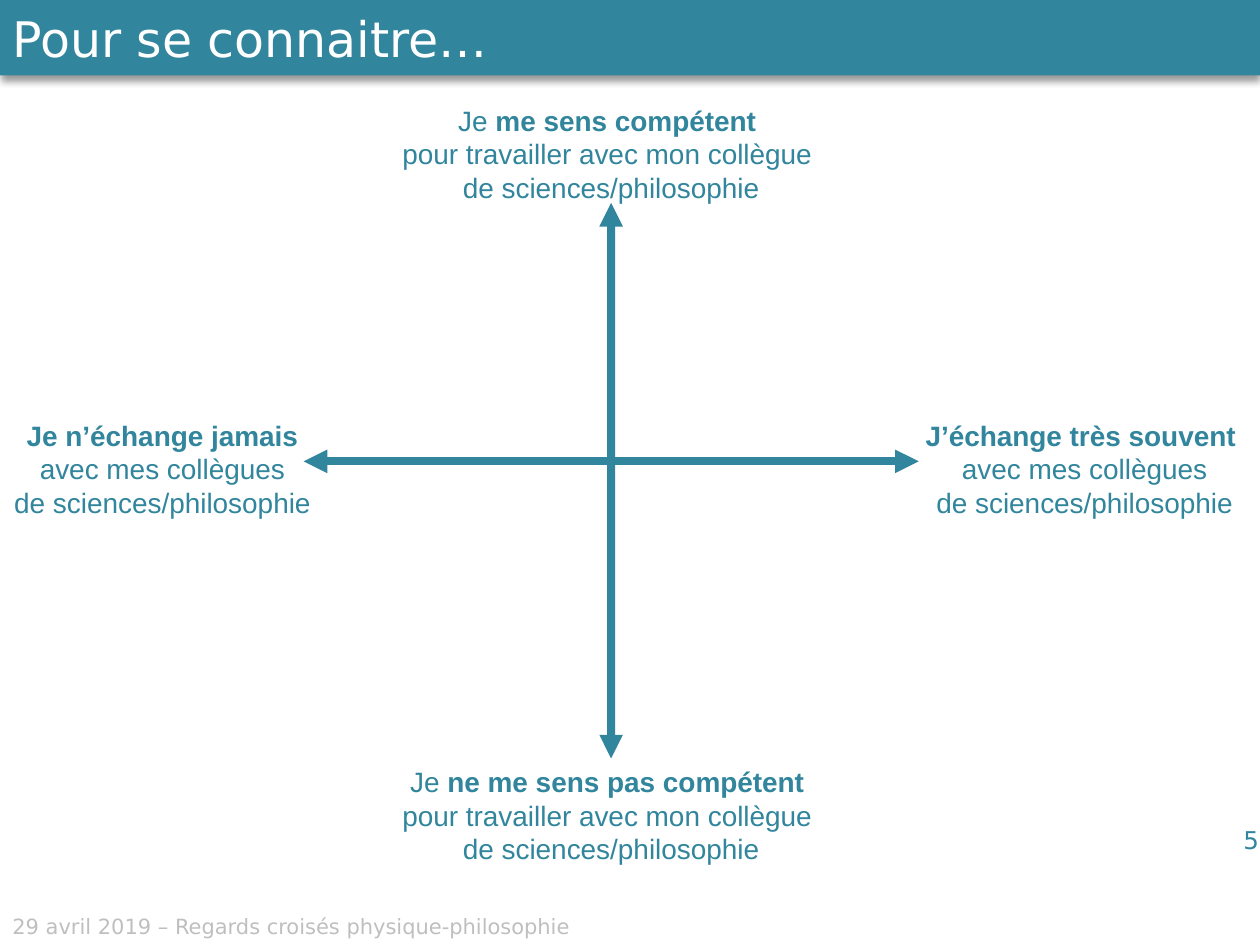
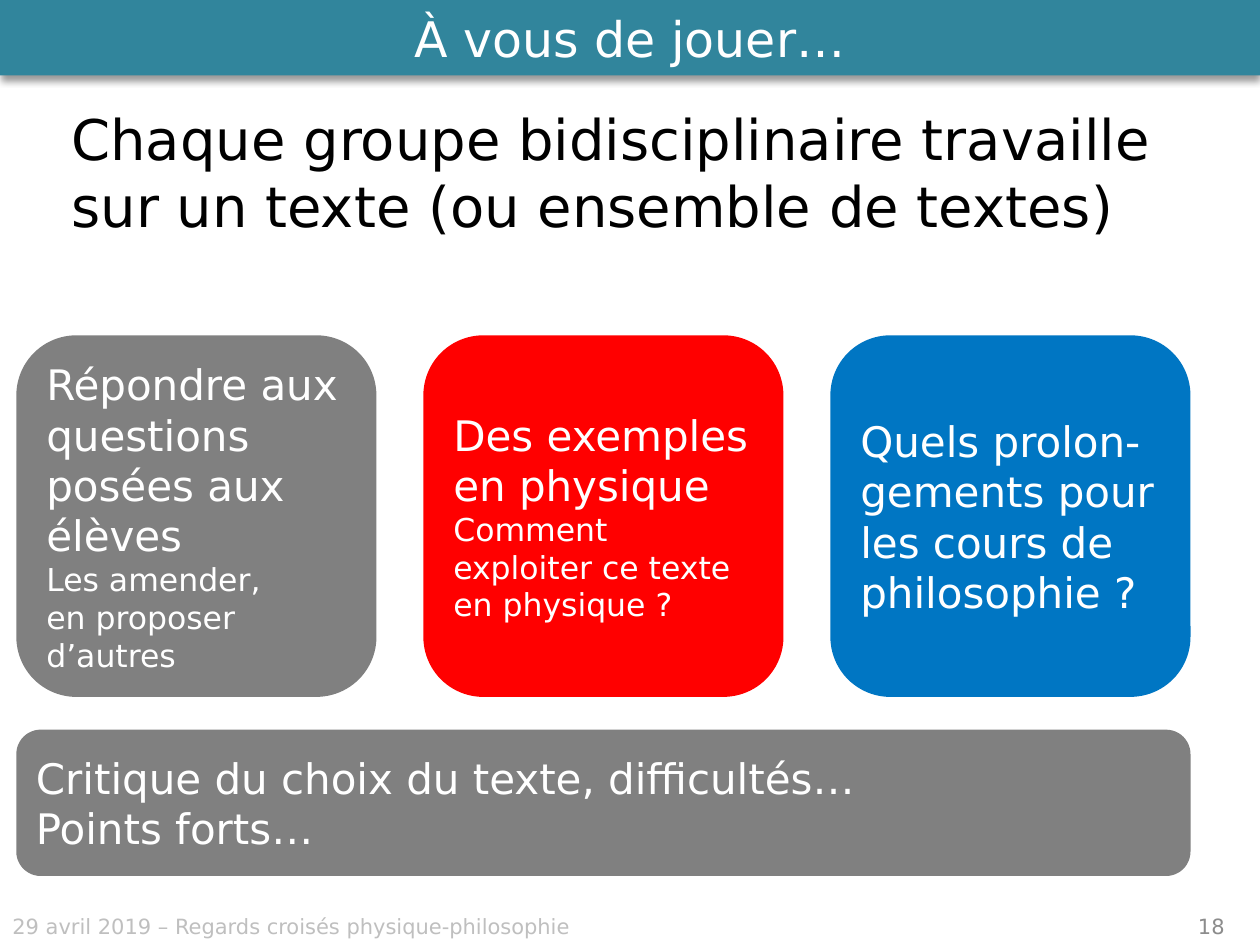
from dataclasses import dataclass

from lxml import etree
from pptx import Presentation
from pptx.dml.color import RGBColor
from pptx.enum.shapes import MSO_CONNECTOR, MSO_SHAPE
from pptx.enum.text import MSO_ANCHOR, PP_ALIGN
from pptx.oxml.ns import qn
from pptx.util import Cm, Pt

RECTANGLE = MSO_SHAPE.RECTANGLE
ROUNDED = MSO_SHAPE.ROUNDED_RECTANGLE
STRAIGHT = MSO_CONNECTOR.STRAIGHT
LEFT, CENTER, RIGHT = PP_ALIGN.LEFT, PP_ALIGN.CENTER, PP_ALIGN.RIGHT
TOP, MIDDLE = MSO_ANCHOR.TOP, MSO_ANCHOR.MIDDLE

COLORS = {
    "teal": "31859C",
    "white": "FFFFFF",
    "black": "000000",
    "grey": "808080",
    "red": "FF0000",
    "blue": "0076C3",
    "footer": "BFBFBF",
    "number": "8C8C8C",
}
BODY_FONT = "DejaVu Sans"
LABEL_FONT = "Arial"
FOOTER = "29 avril 2019 – Regards croisés physique-philosophie"


@dataclass
class Box:
    """A region of the slide, in centimetres."""
    left: float
    top: float
    width: float
    height: float

    def inner(self, left, top, width, height):
        return Box(self.left + left, self.top + top, width, height)

    def lengths(self):
        return Cm(self.left), Cm(self.top), Cm(self.width), Cm(self.height)


PAGE = Box(0, 0, 25.4, 19.05)


def color(name):
    return RGBColor.from_string(COLORS[name])


# Text and shape helpers
def write(shape, paragraphs, color_name, font=BODY_FONT, align=LEFT,
          anchor=TOP, wrap=True):
    """Each paragraph is a list of runs: (text, size, bold)."""
    frame = shape.text_frame
    frame.word_wrap = wrap
    frame.vertical_anchor = anchor
    for index, runs in enumerate(paragraphs):
        paragraph = frame.paragraphs[0] if index == 0 else frame.add_paragraph()
        paragraph.alignment = align
        for text, size, bold in runs:
            run = paragraph.add_run()
            run.text = text
            run.font.name = font
            run.font.size = Pt(size)
            run.font.bold = bold
            run.font.color.rgb = color(color_name)


def add_text(slide, box, paragraphs, color_name, **style):
    shape = slide.shapes.add_textbox(*box.lengths())
    write(shape, paragraphs, color_name, **style)
    return shape


def add_block(slide, kind, box, fill_name, paragraphs, align=LEFT):
    shape = slide.shapes.add_shape(kind, *box.lengths())
    shape.shadow.inherit = False
    shape.fill.solid()
    shape.fill.fore_color.rgb = color(fill_name)
    shape.line.fill.background()
    write(shape, paragraphs, "white", align=align, anchor=MIDDLE)
    return shape


def add_double_arrow(slide, start, end):
    points = [Cm(value) for value in (*start, *end)]
    arrow = slide.shapes.add_connector(STRAIGHT, *points)
    arrow.line.color.rgb = color("teal")
    arrow.line.width = Pt(4.5)
    line = arrow.line._get_or_add_ln()
    for tag in ("a:headEnd", "a:tailEnd"):
        etree.SubElement(line, qn(tag), type="triangle")
    etree.SubElement(arrow._element.spPr, qn("a:effectLst"))
    return arrow


# Shared parts: footer and title band
def add_footer(slide, page):
    box = page.inner(0, 18.29, 16.51, 0.76)
    add_text(slide, box, [[(FOOTER, 12, False)]], "footer")


def add_title_band(slide, page, title, align):
    band = add_block(slide, RECTANGLE, page.inner(0, 0, page.width, 1.52),
                     "teal", [[(title, 28, False)]], align)
    effects = band._element.spPr.find(qn("a:effectLst"))
    shadow = etree.SubElement(effects, qn("a:outerShdw"), blurRad=str(Pt(4)),
                              dist=str(Pt(3)), dir="5400000", rotWithShape="0")
    shade = etree.SubElement(shadow, qn("a:srgbClr"), val=COLORS["black"])
    etree.SubElement(shade, qn("a:alpha"), val="40000")


def add_page_number(slide, box, number, size, color_name, align):
    add_text(slide, box, [[(number, size, False)]], color_name,
             align=align, anchor=MIDDLE)


def start_slide(presentation, title, align):
    slide = presentation.slides.add_slide(presentation.slide_layouts[6])
    add_footer(slide, PAGE)
    add_title_band(slide, PAGE, title, align)
    return slide


# Two crossed axes with a label at each end
def add_axes(slide, box):
    label_height = 2.31
    side_top = 6.35
    competence_end = [[("pour travailler avec mon collègue ", 16, False)],
                      [("de sciences/philosophie", 16, False)]]
    exchange_end = [[("avec mes collègues", 16, False)],
                    [("de sciences/philosophie", 16, False)]]
    labels = {
        "top": (7.8, 0, 9.04, [[("Je ", 16, False),
                ("me sens compétent ", 16, True)]] + competence_end),
        "bottom": (7.8, 13.33, 9.04, [[("Je ", 16, False),
                   ("ne me sens pas compétent ", 16, True)]] + competence_end),
        "left": (0, side_top, 6.55,
                 [[("Je n’échange jamais", 16, True)]] + exchange_end),
        "right": (18.36, side_top, 7.01,
                  [[("J’échange très souvent ", 16, True)]] + exchange_end),
    }
    label_shapes = {
        place: add_text(slide, box.inner(left, top, width, label_height),
                        paragraphs, "teal", font=LABEL_FONT, align=CENTER,
                        wrap=False)
        for place, (left, top, width, paragraphs) in labels.items()
    }

    center_x, center_y = box.left + 12.32, box.top + 7.34
    vertical = add_double_arrow(slide, (center_x, box.top + 13.33),
                                (center_x, box.top + 2.13))
    vertical.begin_connect(label_shapes["bottom"], 0)
    add_double_arrow(slide, (box.left + 6.12, center_y),
                     (box.left + 18.52, center_y))


# Three task cards above a full-width bar
def add_tasks(slide, box):
    cards = [
        ("grey", [[("Répondre aux questions posées aux élèves", 24, False)],
                  [("Les amender,", 18, False)],
                  [("en proposer d’autres", 18, False)]]),
        ("red", [[("Des exemples en physique", 24, False)],
                 [("Comment exploiter ce texte en physique ?", 18, False)]]),
        ("blue", [[("Quels prolon-gements pour les cours de philosophie ?",
                    24, False)]]),
    ]
    card_width, card_height, bar_height = 7.26, 7.29, 2.95
    step = (box.width - card_width) / (len(cards) - 1)
    for index, (fill_name, paragraphs) in enumerate(cards):
        card = box.inner(index * step, 0, card_width, card_height)
        add_block(slide, ROUNDED, card, fill_name, paragraphs)

    bar = box.inner(0, box.height - bar_height, box.width, bar_height)
    add_block(slide, ROUNDED, bar, "grey", [
        [("Critique du choix du texte, difficultés…", 24, False)],
        [("Points forts…", 24, False)]])


def add_instruction(slide, box):
    text = "Chaque groupe bidisciplinaire travaille sur un texte (ou ensemble de textes)"
    shape = add_text(slide, box, [[(text, 32, False)]], "black")
    shape.text_frame.paragraphs[0].space_before = Pt(4)


# Slides
def build_acquaintance_slide(presentation):
    slide = start_slide(presentation, "Pour se connaitre…", LEFT)
    add_page_number(slide, PAGE.inner(19.71, 16.41, 5.92, 1.02), "5", 14,
                    "teal", RIGHT)
    add_axes(slide, PAGE.inner(0, 1.96, 25.4, 15.64))


def build_task_slide(presentation):
    slide = start_slide(presentation, "À vous de jouer…", CENTER)
    add_page_number(slide, PAGE.inner(23.9, 18.31, 1.5, 0.74), "18", 12,
                    "number", LEFT)
    add_instruction(slide, PAGE.inner(1.19, 1.98, 22.86, 3.4))
    add_tasks(slide, PAGE.inner(0.33, 6.76, 23.67, 10.9))


def main():
    presentation = Presentation()
    presentation.slide_width = Cm(PAGE.width)
    presentation.slide_height = Cm(PAGE.height)
    build_acquaintance_slide(presentation)
    build_task_slide(presentation)
    presentation.save("out.pptx")


if __name__ == "__main__":
    main()
